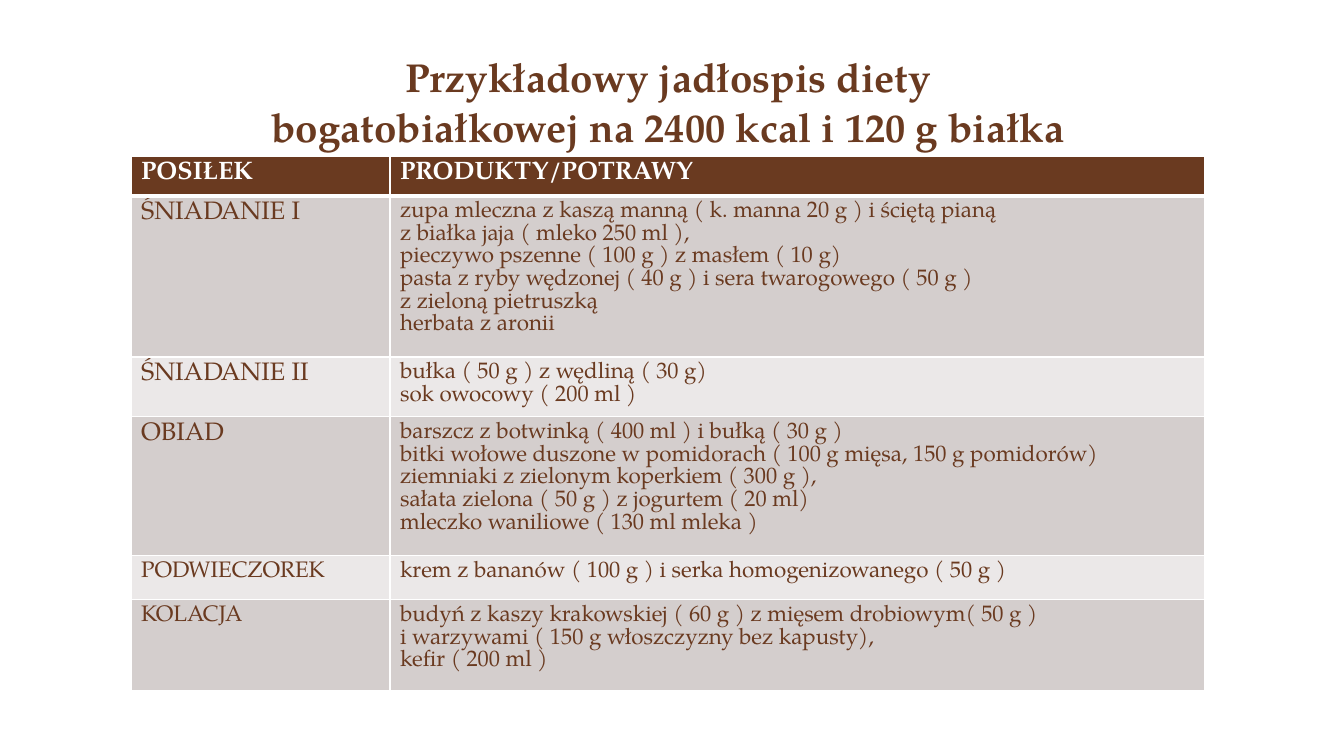
"""Builds a slide with a sample menu for a high-protein diet."""
from dataclasses import dataclass

from lxml import etree
from pptx import Presentation
from pptx.dml.color import RGBColor
from pptx.enum.text import MSO_ANCHOR, PP_ALIGN
from pptx.oxml.ns import qn
from pptx.util import Emu, Pt

CENTER = PP_ALIGN.CENTER
LEFT = PP_ALIGN.LEFT
TOP = MSO_ANCHOR.TOP
FONT = "TeX Gyre Pagella"
COLORS = {"brown": "6A3A20", "white": "FFFFFF", "dark_band": "D4CECD", "light_band": "EBE8E8"}
BLANK_LAYOUT = 6
LINE_HEIGHT = {16: 16.2, 18: 18.2, 28.8: 35.4}
COLUMN_WIDTHS = (259, 815)
TITLE_LINES = ("Przykładowy jadłospis diety", "bogatobiałkowej na 2400 kcal i 120 g białka")


@dataclass(frozen=True)
class TextStyle:
    size: float
    color: str = "brown"
    bold: bool = False
    align: PP_ALIGN = LEFT


@dataclass(frozen=True)
class MenuRow:
    height: int
    meal: str
    dishes: tuple[str, ...]
    meal_size: int = 18


TITLE_STYLE = TextStyle(28.8, bold=True, align=CENTER)
HEADER_STYLE = TextStyle(18, "white", True)
DISH_STYLE = TextStyle(16)
HEADER = MenuRow(40, "POSIŁEK", ("PRODUKTY/POTRAWY",))
MEALS = (
    MenuRow(161, "ŚNIADANIE I", (
        "zupa mleczna z kaszą manną ( k. manna 20 g ) i ściętą pianą",
        "z białka jaja ( mleko 250 ml ),",
        "pieczywo pszenne ( 100 g ) z masłem ( 10 g)",
        "pasta z ryby wędzonej ( 40 g ) i sera twarogowego ( 50 g )",
        "z zieloną pietruszką",
        "herbata z aronii",
    )),
    MenuRow(60, "ŚNIADANIE II", ("bułka ( 50 g ) z wędliną ( 30 g)", "sok owocowy ( 200 ml )")),
    MenuRow(139, "OBIAD", (
        "barszcz z botwinką ( 400 ml ) i bułką ( 30 g )",
        "bitki wołowe duszone w pomidorach ( 100 g mięsa, 150 g pomidorów)",
        "ziemniaki z zielonym koperkiem ( 300 g ),",
        "sałata zielona ( 50 g ) z jogurtem ( 20 ml)",
        "mleczko waniliowe ( 130 ml mleka )",
    )),
    MenuRow(44, "PODWIECZOREK", (
        "krem z bananów ( 100 g ) i serka homogenizowanego ( 50 g )",
    ), 16),
    MenuRow(91, "KOLACJA", (
        "budyń z kaszy krakowskiej ( 60 g ) z mięsem drobiowym( 50 g )",
        "i warzywami ( 150 g włoszczyzny bez kapusty),",
        "kefir ( 200 ml )",
    ), 16),
)


def px(length: int) -> Emu:
    """Turn a length in px into EMU."""
    return Emu(round(length * 914400 / 100.8))


def add_span(para, text: str, style: TextStyle) -> None:
    """Add one styled run to a paragraph."""
    span = para.add_run()
    span.text = text
    span.font.name = FONT
    span.font.size = Pt(style.size)
    span.font.bold = style.bold
    span.font.color.rgb = RGBColor.from_string(COLORS[style.color])


def format_para(para, style: TextStyle) -> None:
    """Set the alignment and line height of a paragraph."""
    para.alignment = style.align
    para.line_spacing = Pt(LINE_HEIGHT[style.size])


def add_title(page) -> None:
    """Place the two-line title above the table."""
    box = page.shapes.add_textbox(px(131), px(51), px(1074), px(100))
    frame = box.text_frame
    frame.word_wrap = True
    frame.vertical_anchor = TOP
    frame.margin_top = frame.margin_bottom = 0
    para = frame.paragraphs[0]
    format_para(para, TITLE_STYLE)
    for index, line in enumerate(TITLE_LINES):
        if index:
            para.add_line_break()
        add_span(para, line, TITLE_STYLE)


def set_borders(cell, top: int, bottom: int) -> None:
    """Draw white borders, with widths in points, around a cell."""
    properties = cell._tc.get_or_add_tcPr()
    widths = {"a:lnL": 1, "a:lnR": 1, "a:lnT": top, "a:lnB": bottom}
    for index, (tag, width) in enumerate(widths.items()):
        line = etree.Element(qn(tag), w=str(Pt(width)))
        fill = etree.SubElement(line, qn("a:solidFill"))
        etree.SubElement(fill, qn("a:srgbClr"), val=COLORS["white"])
        properties.insert(index, line)


def fill_cell(cell, lines: tuple[str, ...], style: TextStyle, band: str) -> None:
    """Fill a cell with colour and one paragraph for each line."""
    cell.fill.solid()
    cell.fill.fore_color.rgb = RGBColor.from_string(COLORS[band])
    cell.vertical_anchor = TOP
    frame = cell.text_frame
    for index, line in enumerate(lines):
        para = frame.add_paragraph() if index else frame.paragraphs[0]
        format_para(para, style)
        add_span(para, line, style)


def add_menu(page) -> None:
    """Place the table of meals and dishes."""
    rows = (HEADER, *MEALS)
    height = sum(row.height for row in rows)
    table = page.shapes.add_table(
        len(rows), len(COLUMN_WIDTHS), px(131), px(156), px(sum(COLUMN_WIDTHS)), px(height)
    ).table
    for column, width in zip(table.columns, COLUMN_WIDTHS):
        column.width = px(width)
    for index, row in enumerate(rows):
        table.rows[index].height = px(row.height)
        is_header = index == 0
        band = "brown" if is_header else "dark_band" if index % 2 else "light_band"
        meal_style = HEADER_STYLE if is_header else TextStyle(row.meal_size)
        dish_style = HEADER_STYLE if is_header else DISH_STYLE
        fill_cell(table.cell(index, 0), (row.meal,), meal_style, band)
        fill_cell(table.cell(index, 1), row.dishes, dish_style, band)
        for cell in table.rows[index].cells:
            set_borders(cell, 3 if index == 1 else 1, 3 if is_header else 1)


def main() -> None:
    """Build and save the deck."""
    deck = Presentation()
    deck.slide_width, deck.slide_height = px(1344), px(756)
    page = deck.slides.add_slide(deck.slide_layouts[BLANK_LAYOUT])
    add_title(page)
    add_menu(page)
    deck.save("out.pptx")


if __name__ == "__main__":
    main()
